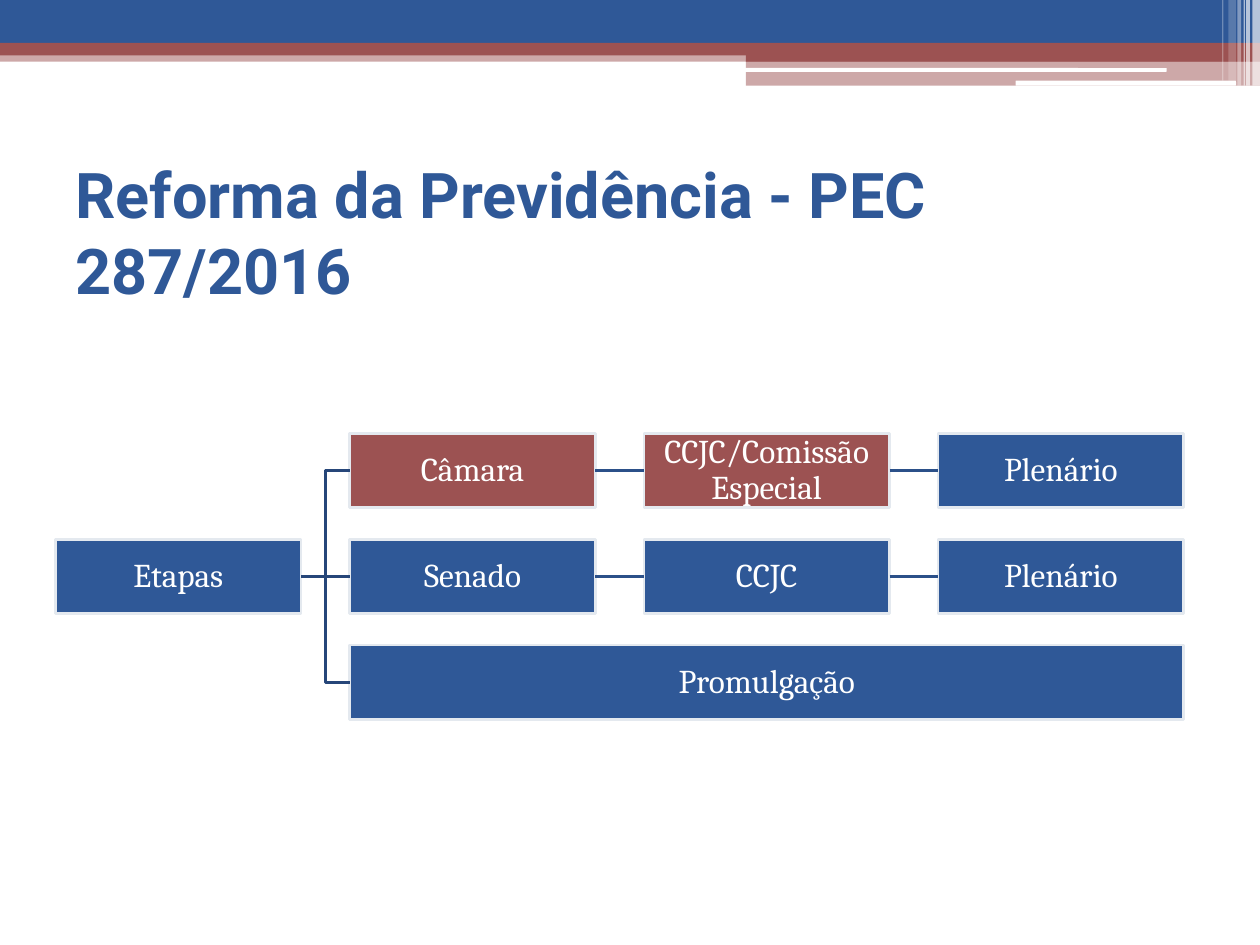
from lxml import etree
from pptx import Presentation
from pptx.dml.color import RGBColor
from pptx.enum.shapes import MSO_CONNECTOR, MSO_SHAPE
from pptx.enum.text import MSO_ANCHOR, PP_ALIGN
from pptx.oxml.ns import qn
from pptx.util import Inches, Pt

RECTANGLE, ROUNDED = MSO_SHAPE.RECTANGLE, MSO_SHAPE.ROUNDED_RECTANGLE
STRAIGHT, ELBOW = MSO_CONNECTOR.STRAIGHT, MSO_CONNECTOR.ELBOW
MIDDLE, LEFT, CENTER = MSO_ANCHOR.MIDDLE, PP_ALIGN.LEFT, PP_ALIGN.CENTER
LEFT_SITE, RIGHT_SITE = 1, 3

THEME = {
    "blue": "2F5897", "red": "9C5252", "white": "FFFFFF", "border": "E4E9EF",
    "root_line": "264679", "step_line": "2B5089", "line_width": 1.5,
    "title": {"name": "Roboto", "size": Pt(36), "bold": True},
    "box": {"name": "Cambria", "size": Pt(19)},
}

TITLE = "Reforma da Previdência - PEC 287/2016"
ROOT = "Etapas"
STAGES = [
    [("Câmara", "red"), ("CCJC/Comissão Especial", "red"), ("Plenário", "blue")],
    [("Senado", "blue"), ("CCJC", "blue"), ("Plenário", "blue")],
    [("Promulgação", "blue")],
]

HEADER_BANDS = [
    (RECTANGLE, 0, 0.4, 10, 0.09, "red", 50),
    (RECTANGLE, 0, 0, 10, 0.34, "blue", 100),
    (RECTANGLE, 0, 0.34, 10, 0.1, "red", 100),
    (RECTANGLE, 5.92, 0.39, 4.08, 0.1, "red", 100),
    (RECTANGLE, 5.92, 0.48, 4.08, 0.2, "red", 50),
    (ROUNDED, 5.91, 0.54, 3.35, 0.03, "white", 100),
    (ROUNDED, 8.06, 0.64, 1.75, 0.04, "white", 100),
]
HEADER_STRIPES = [
    (9.94, 0.06, 0.68, 65), (9.89, 0.03, 0.68, 65), (9.87, 0.01, 0.68, 60),
    (9.82, 0.03, 0.68, 40), (9.75, 0.06, 0.64, 20), (9.7, 0.01, 0.64, 30),
]

GRID_LEFT, GRID_TOP = 0.44, 3.44
COLUMN_STEP, ROW_STEP = 2.335, 0.84
BOX_WIDTH, BOX_HEIGHT = 1.95, 0.59
COLUMNS, ROOT_ROW = 4, 1


def color(name):
    return RGBColor.from_string(THEME[name])


def add_block(slide, kind, left, top, width, height, fill, opacity=100):
    shape = slide.shapes.add_shape(kind, *map(Inches, (left, top, width, height)))
    shape.shadow.inherit = False
    shape.fill.solid()
    shape.fill.fore_color.rgb = color(fill)
    shape.line.fill.background()
    if opacity < 100:
        fill_color = shape.fill._xPr.find(qn("a:solidFill"))[0]
        etree.SubElement(fill_color, qn("a:alpha"), val=str(opacity * 1000))
    return shape


def write_text(shape, text, style, text_color, alignment):
    frame = shape.text_frame
    frame.word_wrap = True
    frame.vertical_anchor = MIDDLE
    paragraph = frame.paragraphs[0]
    paragraph.alignment = alignment
    run = paragraph.add_run()
    run.text = text
    for attribute, value in THEME[style].items():
        setattr(run.font, attribute, value)
    run.font.color.rgb = color(text_color)
    return frame


def add_box(slide, text, fill, row, column, span=1):
    left, top = GRID_LEFT + column * COLUMN_STEP, GRID_TOP + row * ROW_STEP
    width = BOX_WIDTH + (span - 1) * COLUMN_STEP
    box = add_block(slide, RECTANGLE, left, top, width, BOX_HEIGHT, fill)
    box.line.color.rgb = color("border")
    box.line.width = Pt(THEME["line_width"])
    frame = write_text(box, text, "box", "white", CENTER)
    frame.paragraphs[0].line_spacing = 0.9
    for side in ("left", "top", "right", "bottom"):
        setattr(frame, f"margin_{side}", Inches(0.01))
    return box


def connect(slide, source, target, line_color):
    kind = STRAIGHT if source.top == target.top else ELBOW
    connector = slide.shapes.add_connector(kind, 0, 0, 0, 0)
    connector.begin_connect(source, RIGHT_SITE)
    connector.end_connect(target, LEFT_SITE)
    connector.line.color.rgb = color(line_color)
    connector.line.width = Pt(THEME["line_width"])
    etree.SubElement(connector._element.spPr, qn("a:effectLst"))


def add_stages(slide):
    root = add_box(slide, ROOT, "blue", ROOT_ROW, 0)
    for row, steps in enumerate(STAGES):
        previous, line_color = root, "root_line"
        for column, (text, fill) in enumerate(steps, start=1):
            span = COLUMNS - column if len(steps) == 1 else 1
            box = add_box(slide, text, fill, row, column, span)
            connect(slide, previous, box, line_color)
            previous, line_color = box, "step_line"


def main():
    """Build the slide with the stages of the reform."""
    presentation = Presentation()
    presentation.slide_width, presentation.slide_height = Inches(10), Inches(7.5)
    slide = presentation.slides.add_slide(presentation.slide_layouts[6])
    for band in HEADER_BANDS:
        add_block(slide, *band)
    for left, width, height, opacity in HEADER_STRIPES:
        add_block(slide, RECTANGLE, left, 0, width, height, "white", opacity)
    title = slide.shapes.add_textbox(*map(Inches, (0.5, 1.25, 9, 1.17)))
    write_text(title, TITLE, "title", "blue", LEFT)
    add_stages(slide)
    presentation.save("out.pptx")


if __name__ == "__main__":
    main()
